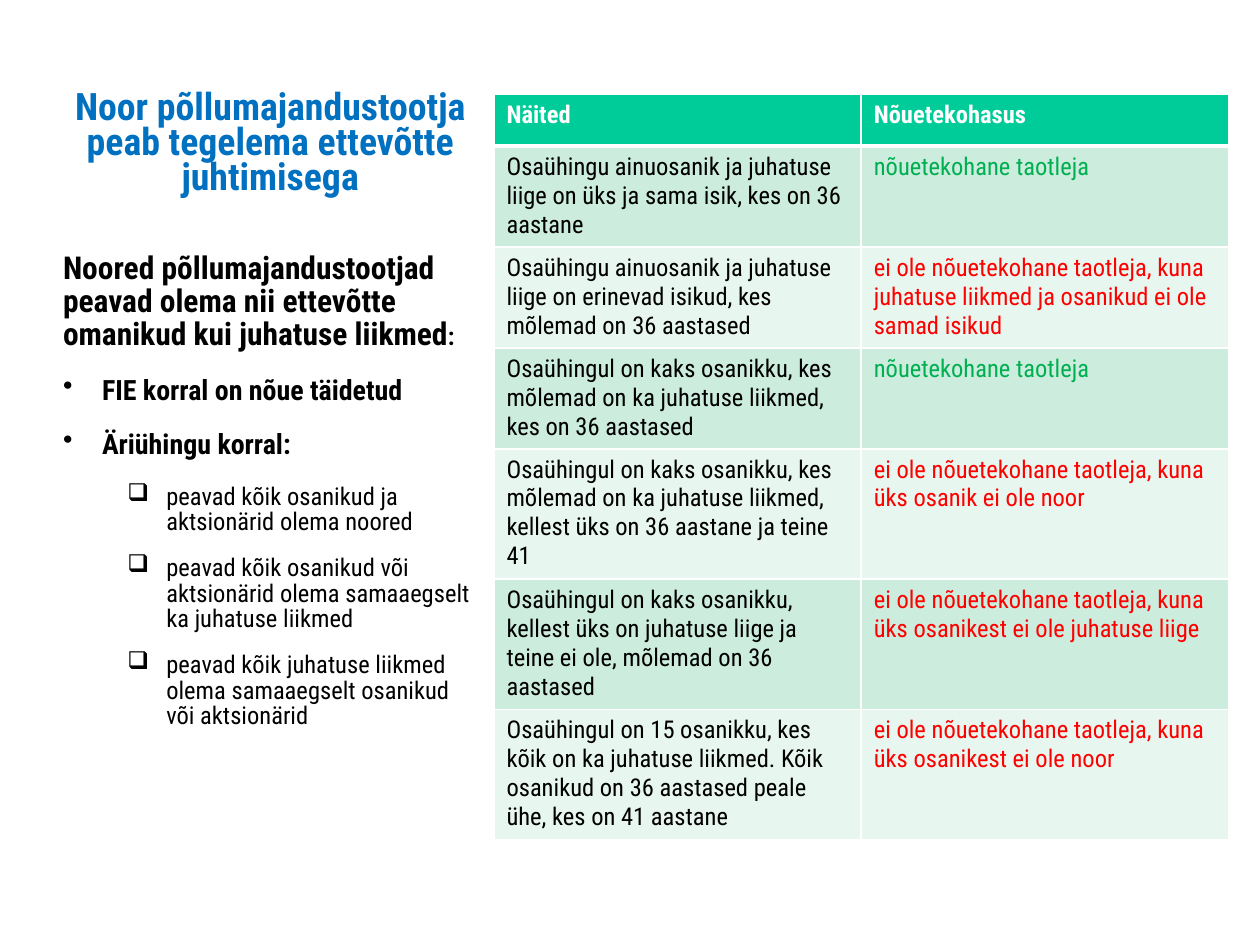
from lxml import etree
from pptx import Presentation, util as u
from pptx.dml.color import RGBColor
from pptx.enum import text
from pptx.oxml import ns

FONT = "Roboto Condensed"
C = {"title": "0070C0", "black": "000000", "white": "FFFFFF", "head": "00CC99",
     "band": "CCECDE", "pale": "E7F6EF", "yes": "00B050", "no": "FF0000"}

prs = Presentation()
prs.slide_width, prs.slide_height = u.Inches(10), u.Inches(7.5)
s = prs.slides.add_slide(prs.slide_layouts[6])
COL, ROW = prs.slide_width / 100, prs.slide_height / 75


def add_run(p, words, size, color, bold=False):
    r = p.add_run()
    r.text = words
    for key, value in {"name": FONT, "size": u.Pt(size), "bold": bold}.items():
        setattr(r.font, key, value)
    r.font.color.rgb = RGBColor.from_string(C[color])


def add_box(x, y, w, h, anchor, top=0):
    sp = s.shapes.add_textbox(int(x * COL), int(y * ROW), int(w * COL), int(h * ROW))
    tf = sp.text_frame
    fmt = {"word_wrap": True, "vertical_anchor": anchor, "margin_left": 0,
           "margin_right": 0, "margin_top": int(top * ROW), "margin_bottom": 0}
    for key, value in fmt.items():
        setattr(tf, key, value)
    return tf


p = add_box(5, 3, 32.9, 12.7, text.MSO_ANCHOR.BOTTOM).paragraphs[0]
p.alignment, p.line_spacing = text.PP_ALIGN.CENTER, 0.77
add_run(p, "Noor põllumajandustootja peab tegelema ettevõtte juhtimisega", 21.6, "title", True)

examples = [
    ("Osaühingu ainuosanik ja juhatuse liige on üks ja sama isik, kes on 36 aastane",
     "nõuetekohane taotleja", "yes"),
    ("Osaühingu ainuosanik ja juhatuse liige on erinevad isikud, kes mõlemad on 36 aastased",
     "ei ole nõuetekohane taotleja, kuna juhatuse liikmed ja osanikud ei ole samad isikud", "no"),
    ("Osaühingul on kaks osanikku, kes mõlemad on ka juhatuse liikmed, kes on 36 aastased",
     "nõuetekohane taotleja", "yes"),
    ("Osaühingul on kaks osanikku, kes mõlemad on ka juhatuse liikmed, "
     "kellest üks on 36 aastane ja teine 41",
     "ei ole nõuetekohane taotleja, kuna üks osanik ei ole noor", "no"),
    ("Osaühingul on kaks osanikku, kellest üks on juhatuse liige ja teine ei ole, "
     "mõlemad on 36 aastased",
     "ei ole nõuetekohane taotleja, kuna üks osanikest ei ole juhatuse liige", "no"),
    ("Osaühingul on 15 osanikku, kes kõik on ka juhatuse liikmed. "
     "Kõik osanikud on 36 aastased peale ühe, kes on 41 aastane",
     "ei ole nõuetekohane taotleja, kuna üks osanikest ei ole noor", "no"),
]
rows = [[("Näited", "white"), ("Nõuetekohasus", "white")]]
rows += [[(example, "black"), (verdict, color)] for example, verdict, color in examples]

frame = s.shapes.add_table(len(rows), 2, int(39.2 * COL), int(7.5 * ROW),
                           int(58.3 * COL), int(63.7 * ROW))
table = frame.table
for i, row in enumerate(rows):
    table.rows[i].height = int(4.1 * ROW)
    for j, (words, color) in enumerate(row):
        cell = table.cell(i, j)
        add_run(cell.text_frame.paragraphs[0], words, 14, color, i == 0)
        tcPr = cell._tc.get_or_add_tcPr()
        for side in "LRTB":
            thick = (i, side) in [(0, "B"), (1, "T")]
            ln = etree.SubElement(tcPr, ns.qn("a:ln" + side), w=str(u.Pt(3 if thick else 1)))
            fill = etree.SubElement(ln, ns.qn("a:solidFill"))
            etree.SubElement(fill, ns.qn("a:srgbClr"), val=C["white"])
        cell.fill.solid()
        shade = "head" if i == 0 else "band" if i % 2 else "pale"
        cell.fill.fore_color.rgb = RGBColor.from_string(C[shade])
frame.height = int(63.7 * ROW)

tf = add_box(5, 20, 32.9, 47, text.MSO_ANCHOR.TOP, 0.1)
p = tf.paragraphs[0]
p.line_spacing, p.space_after = 0.87, u.Pt(14.2)
add_run(p, "Noored põllumajandustootjad peavad olema nii ettevõtte omanikud "
           "kui juhatuse liikmed", 18, "black", True)
add_run(p, ":", 14, "black", True)

levels = [{"char": "•", "margin": 3.1, "size": 16, "bold": True, "after": 14.2},
          {"char": "❑", "margin": 8.2, "size": 14, "bold": False, "after": 11.5}]
points = [(0, "FIE korral on nõue täidetud"),
          (0, "Äriühingu korral:"),
          (1, "peavad kõik osanikud ja aktsionärid olema noored"),
          (1, "peavad kõik osanikud või aktsionärid olema samaaegselt ka juhatuse liikmed"),
          (1, "peavad kõik juhatuse liikmed olema samaaegselt osanikud või aktsionärid")]
for level, words in points:
    fmt = levels[level]
    p = tf.add_paragraph()
    p.level, p.line_spacing, p.space_after = level, 0.87, u.Pt(fmt["after"])
    pPr = p._p.get_or_add_pPr()
    pPr.set("marL", str(int(fmt["margin"] * COL)))
    pPr.set("indent", str(int(-3.1 * COL)))
    bullet = etree.SubElement(pPr, ns.qn("a:buClr"))
    etree.SubElement(bullet, ns.qn("a:srgbClr"), val=C["black"])
    etree.SubElement(pPr, ns.qn("a:buChar"), char=fmt["char"])
    add_run(p, words, fmt["size"], "black", fmt["bold"])

prs.save("out.pptx")
